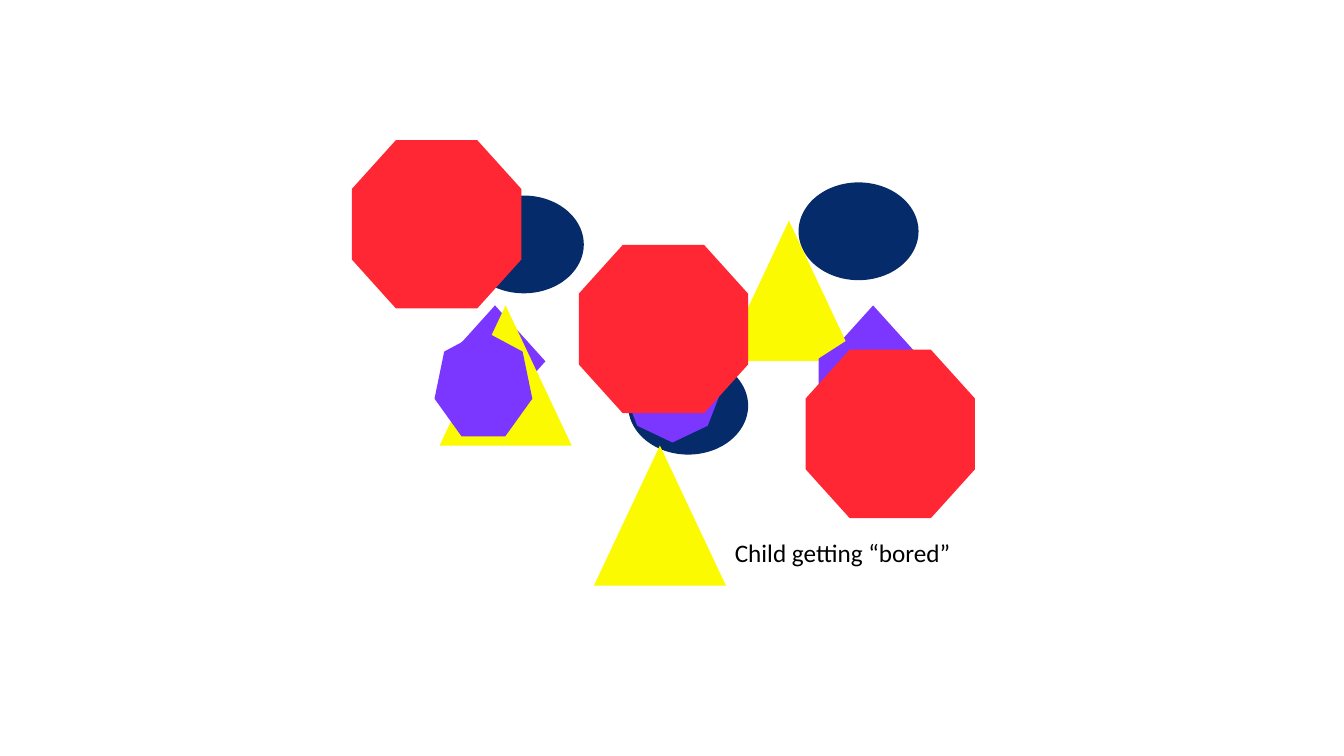
from pptx import Presentation
from pptx.dml.color import RGBColor
from pptx.enum.shapes import MSO_SHAPE
from pptx.enum.text import MSO_AUTO_SIZE
from pptx.util import Inches, Pt

NAVY = RGBColor(0x06, 0x2B, 0x6B)
PURPLE = RGBColor(0x7B, 0x36, 0xFF)
YELLOW = RGBColor(0xFB, 0xFA, 0x00)
RED = RGBColor(0xFF, 0x27, 0x34)
BLACK = RGBColor(0, 0, 0)

ELLIPSE = MSO_SHAPE.OVAL
DIAMOND = MSO_SHAPE.DIAMOND
TRIANGLE = MSO_SHAPE.ISOSCELES_TRIANGLE
HEPTAGON = MSO_SHAPE.HEPTAGON
GROW_TO_TEXT = MSO_AUTO_SIZE.SHAPE_TO_FIT_TEXT

ROUND_OCTAGON = [(0.5, 0), (0.85, 0.15), (1, 0.5), (0.85, 0.85),
                 (0.5, 1), (0.15, 0.85), (0, 0.5), (0.15, 0.15)]
HEXAGON = [(0.5, 0), (1, 0.25), (1, 0.75), (0.5, 1), (0, 0.75), (0, 0.25)]
STOP_SIGN = [(0.26, 0), (0, 0.29), (0, 0.71), (0.26, 1),
             (0.74, 1), (1, 0.71), (1, 0.29), (0.74, 0)]


class ShapeBoard:
    """Draws flat shapes on one slide, measured in grid cells of a tenth of an inch."""

    cell = Inches(0.1)
    font = "Calibri"

    def __init__(self, deck):
        self.slide = deck.slides.add_slide(deck.slide_layouts[6])

    def cells(self, *counts):
        return [round(count * self.cell) for count in counts]

    def paint(self, figure, color):
        figure.shadow.inherit = False
        figure.fill.solid()
        figure.fill.fore_color.rgb = color
        figure.line.fill.background()

    def preset(self, kind, color, col, row, cols, rows):
        place = self.cells(col, row, cols, rows)
        self.paint(self.slide.shapes.add_shape(kind, *place), color)

    def polygon(self, outline, color, col, row, cols, rows):
        corners = [self.cells(col + x * cols, row + y * rows) for x, y in outline]
        builder = self.slide.shapes.build_freeform(*corners[0])
        builder.add_line_segments(corners[1:], close=True)
        self.paint(builder.convert_to_shape(), color)

    def caption(self, wording, size, col, row, cols, rows):
        place = self.cells(col, row, cols, rows)
        frame = self.slide.shapes.add_textbox(*place).text_frame
        frame.word_wrap = False
        frame.auto_size = GROW_TO_TEXT
        frame.text = wording
        font = frame.paragraphs[0].runs[0].font
        font.name = self.font
        font.size = Pt(size)
        font.color.rgb = BLACK


def main():
    deck = Presentation()
    deck.slide_width = Inches(13.33)
    deck.slide_height = Inches(7.5)
    board = ShapeBoard(deck)

    for col, row in [(46, 19.4), (79.2, 18.1), (62.3, 35.4)]:
        board.preset(ELLIPSE, NAVY, col, row, 11.9, 9.7)
    for step in range(3):
        board.preset(DIAMOND, PURPLE, 44.1 + 18.75 * step, 30.3, 10, 11.1)
    for col, row in [(43.6, 30.3), (71.7, 21.9), (58.9, 44.2)]:
        board.preset(TRIANGLE, YELLOW, col, row, 13.1, 13.9)

    board.preset(HEPTAGON, PURPLE, 43.1, 32.8, 9.7, 10.5)
    board.polygon(ROUND_OCTAGON, PURPLE, 61.7, 32.8, 10, 11.1)
    board.polygon(HEXAGON, PURPLE, 81.2, 32.8, 8.6, 11.1)

    for step in range(3):
        board.polygon(STOP_SIGN, RED, 34.9 + 22.5 * step, 13.9 + 10.4 * step, 16.8, 16.7)

    board.caption("Child getting “bored”", 18, 71.9, 52.8, 23.7, 4)
    deck.save("out.pptx")


if __name__ == "__main__":
    main()
